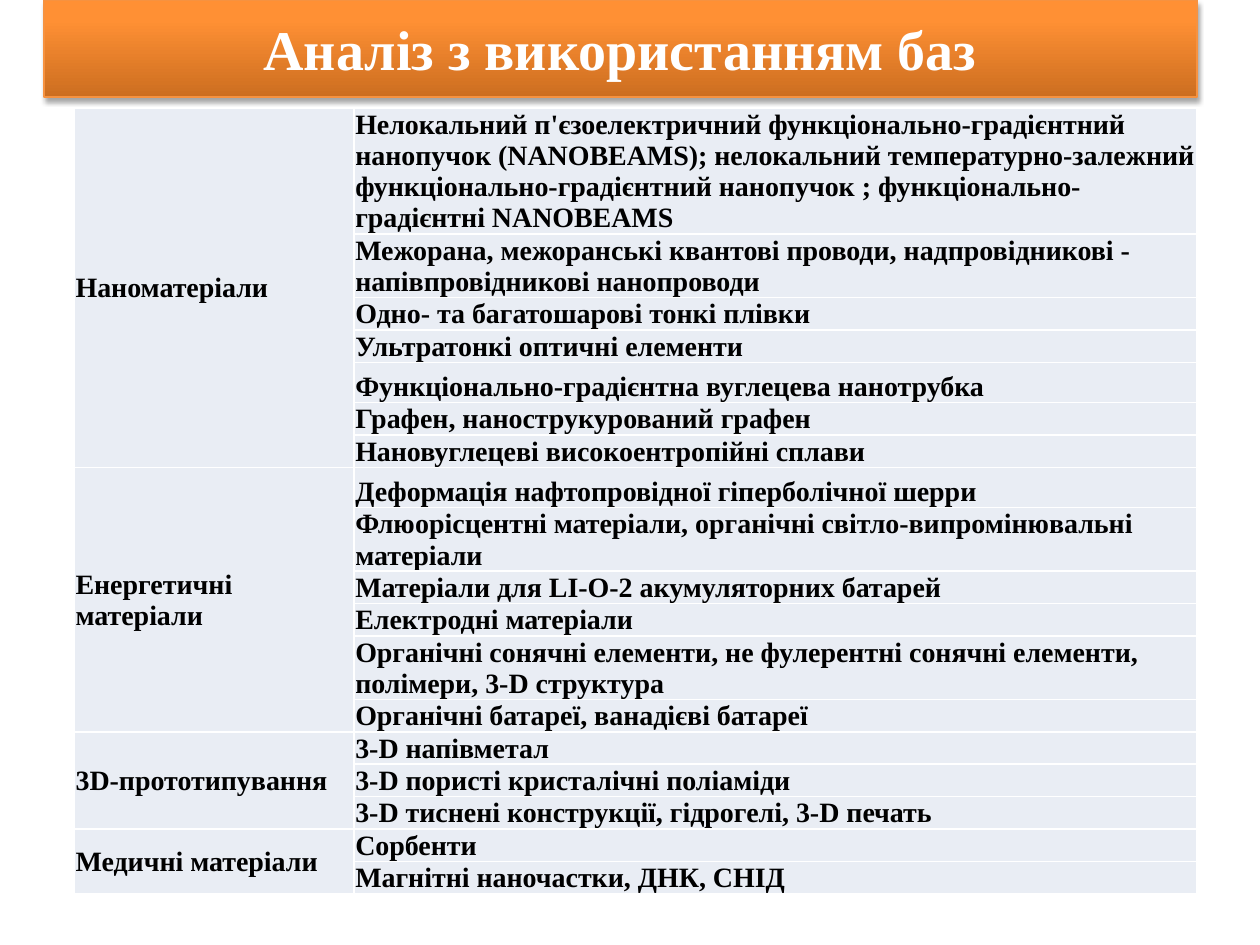
import copy
from dataclasses import dataclass

import lxml.etree
import pptx
import pptx.dml.color
import pptx.enum.text
import pptx.oxml.ns
import pptx.util

Inches = pptx.util.Inches
Pt = pptx.util.Pt
ANCHOR = pptx.enum.text.MSO_ANCHOR
qn = pptx.oxml.ns.qn


@dataclass(frozen=True)
class Theme:
    font: str = "Times New Roman"
    title_size: int = 32
    cell_size: int = 16
    white: str = "FFFFFF"
    black: str = "000000"
    cell_fill: str = "E9EDF4"
    banner_line: str = "F69240"
    banner_stops: tuple = ((0, "CC6E20"), (0.8, "FF9034"), (1, "FF9136"))


THEME = Theme()
TITLE = "Аналіз з використанням баз"
SINGLE, PADDED = 0.18, 0.32

# Each group: its name, then (material, row height in inches)
GROUPS = [
    ("Наноматеріали", [
        ("Нелокальний п'єзоелектричний функціонально-градієнтний нанопучок (NANOBEAMS); "
         "нелокальний температурно-залежний функціонально-градієнтний нанопучок ; "
         "функціонально-градієнтні NANOBEAMS", 0.95),
        ("Межорана, межоранські квантові проводи, надпровідникові - "
         "напівпровідникові нанопроводи", 0.48),
        ("Одно- та багатошарові тонкі плівки", SINGLE),
        ("Ультратонкі оптичні елементи", SINGLE),
        ("Функціонально-градієнтна вуглецева нанотрубка", PADDED),
        ("Графен, нанострукурований графен", SINGLE),
        ("Нановуглецеві високоентропійні сплави", SINGLE),
    ]),
    ("Енергетичні матеріали", [
        ("Деформація нафтопровідної гіперболічної шерри", PADDED),
        ("Флюорісцентні матеріали, органічні світло-випромінювальні матеріали", PADDED),
        ("Матеріали для LI-O-2 акумуляторних батарей", SINGLE),
        ("Електродні матеріали", SINGLE),
        ("Органічні сонячні елементи, не фулерентні сонячні елементи, "
         "полімери, 3-D структура", 0.36),
        ("Органічні батареї, ванадієві батареї", SINGLE),
    ]),
    ("3D-прототипування", [
        ("3-D напівметал", 0.22),
        ("3-D пористі кристалічні поліаміди", SINGLE),
        ("3-D тиснені конструкції, гідрогелі, 3-D печать", SINGLE),
    ]),
    ("Медичні матеріали", [
        ("Сорбенти", SINGLE),
        ("Магнітні наночастки, ДНК, СНІД", SINGLE),
    ]),
]


def rgb(color):
    return pptx.dml.color.RGBColor.from_string(color)


def style_text(paragraph, size, color):
    for run in paragraph.runs:
        run.font.name = THEME.font
        run.font.size = Pt(size)
        run.font.bold = True
        run.font.color.rgb = rgb(color)


def add_color(parent, color):
    return lxml.etree.SubElement(parent, qn("a:srgbClr"), val=color)


def add_shadow(shape):
    effects = lxml.etree.SubElement(shape._element.spPr, qn("a:effectLst"))
    shadow = lxml.etree.SubElement(
        effects, qn("a:outerShdw"), blurRad=str(Pt(3.1)), dist=str(Pt(1.8)),
        dir="5400000", rotWithShape="0")
    lxml.etree.SubElement(add_color(shadow, THEME.black), qn("a:alpha"), val="35000")


def fill_banner(fill):
    fill.gradient()
    fill.gradient_angle = 90
    first_stop = fill._fill._gradFill.find(qn("a:gsLst"))[0]
    first_stop.addnext(copy.deepcopy(first_stop))
    for stop, (position, color) in zip(fill.gradient_stops, THEME.banner_stops):
        stop.position = position
        stop.color.rgb = rgb(color)


def place_title(slide, left, top, width, height):
    title = slide.shapes.title
    title.left, title.top, title.width, title.height = left, top, width, height
    fill_banner(title.fill)
    title.line.color.rgb = rgb(THEME.banner_line)
    title.line.width = Pt(0.75)
    add_shadow(title)
    frame = title.text_frame
    frame.text = TITLE
    frame.vertical_anchor = ANCHOR.MIDDLE
    frame.paragraphs[0].alignment = pptx.enum.text.PP_ALIGN.CENTER
    style_text(frame.paragraphs[0], THEME.title_size, THEME.white)


def add_borders(cell):
    properties = cell._tc.get_or_add_tcPr()
    for index, side in enumerate(("lnL", "lnR", "lnT", "lnB")):
        border = lxml.etree.Element(qn(f"a:{side}"), w=str(Pt(1)))
        add_color(lxml.etree.SubElement(border, qn("a:solidFill")), THEME.white)
        properties.insert(index, border)


def style_cell(cell, anchor):
    cell.fill.solid()
    cell.fill.fore_color.rgb = rgb(THEME.cell_fill)
    add_borders(cell)
    cell.margin_left = cell.margin_right = cell.margin_top = Inches(0.01)
    cell.margin_bottom = 0
    cell.vertical_anchor = anchor
    style_text(cell.text_frame.paragraphs[0], THEME.cell_size, THEME.black)


def place_materials(slide, left, top, width, height):
    row_count = sum(len(materials) for _, materials in GROUPS)
    frame = slide.shapes.add_table(row_count, 2, left, top, width, height)
    table = frame.table
    table.first_row = table.horz_banding = False
    table.columns[0].width = Inches(2.22)
    table.columns[1].width = width - Inches(2.22)
    row = 0
    for group, materials in GROUPS:
        table.cell(row, 0).text_frame.text = group
        table.cell(row, 0).merge(table.cell(row + len(materials) - 1, 0))
        for material, row_height in materials:
            table.rows[row].height = Inches(row_height)
            table.cell(row, 1).text_frame.text = material
            style_cell(table.cell(row, 0), ANCHOR.MIDDLE)
            style_cell(table.cell(row, 1), ANCHOR.BOTTOM)
            row += 1
    frame.height = height  # row heights reset the frame


def main():
    deck = pptx.Presentation()
    deck.slide_width, deck.slide_height = Inches(10), Inches(7.5)
    slide = deck.slides.add_slide(deck.slide_layouts[5])
    place_title(slide, Inches(0.35), Inches(0), Inches(9.15), Inches(0.77))
    place_materials(slide, Inches(0.59), Inches(0.86), Inches(8.91), Inches(6.66))
    deck.save("out.pptx")


if __name__ == "__main__":
    main()
